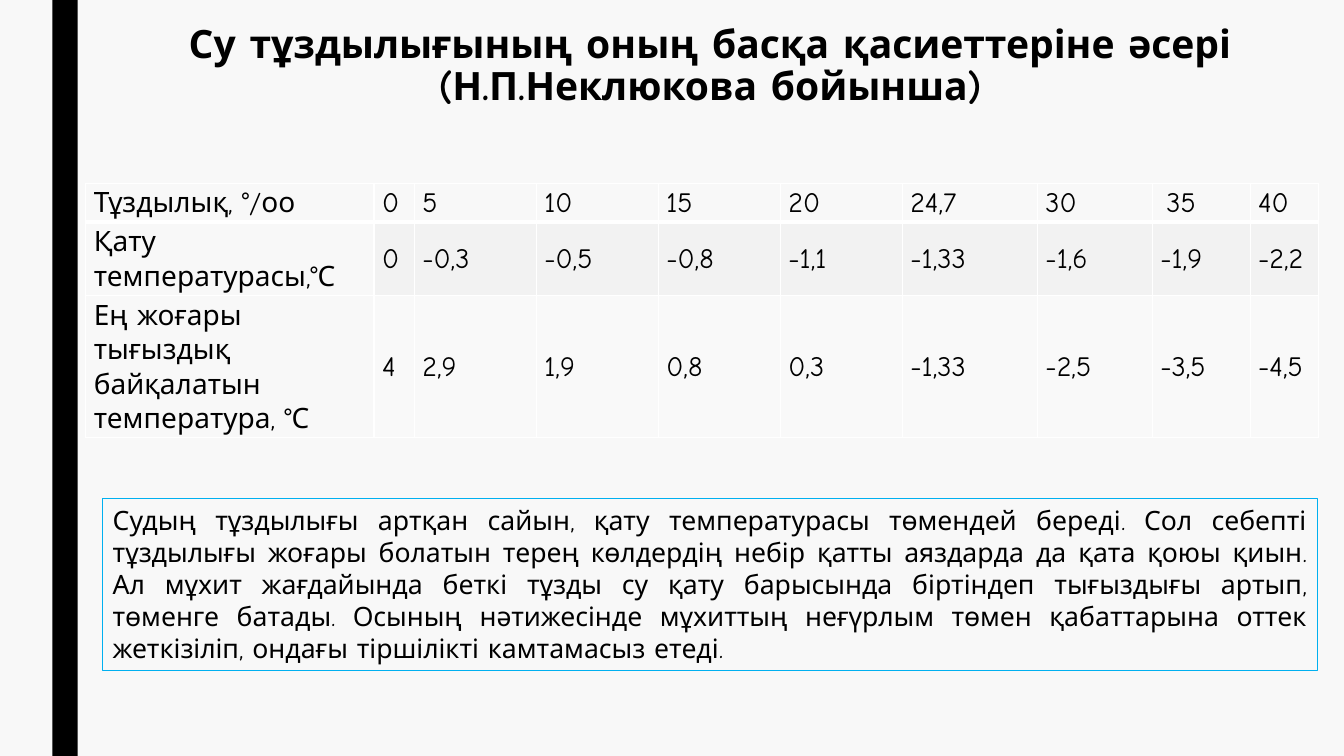
from dataclasses import dataclass

from lxml import etree
from pptx import Presentation
from pptx.dml.color import RGBColor
from pptx.enum.shapes import MSO_SHAPE
from pptx.enum.text import MSO_ANCHOR, MSO_AUTO_SIZE, PP_ALIGN
from pptx.oxml.ns import qn
from pptx.util import Inches, Pt

RECTANGLE = MSO_SHAPE.RECTANGLE
TOP, MIDDLE = MSO_ANCHOR.TOP, MSO_ANCHOR.MIDDLE
LEFT, CENTER, JUSTIFY = PP_ALIGN.LEFT, PP_ALIGN.CENTER, PP_ALIGN.JUSTIFY
NO_FIT, FIT_SHAPE = MSO_AUTO_SIZE.NONE, MSO_AUTO_SIZE.SHAPE_TO_FIT_TEXT

FONT = "Comic Neue"
COLOURS = {
    "page": "F8F8F8",
    "ink": "000000",
    "band": "F2F2F2",
    "plain": "F9F9F9",
    "grid": "FFFFFF",
    "frame": "00B0F0",
}
SLIDE_WIDTH, SLIDE_HEIGHT = Inches(13.33), Inches(7.5)


@dataclass(frozen=True)
class Area:
    """A place on the slide, in percent of its width and height."""
    left: float
    top: float
    width: float
    height: float

    def lengths(self) -> tuple[int, int, int, int]:
        return (across(self.left), down(self.top),
                across(self.width), down(self.height))


@dataclass(frozen=True)
class TextStyle:
    size: float
    align: PP_ALIGN = LEFT
    bold: bool = False
    line_spacing: float = 1.0
    space_after: float = 0


@dataclass(frozen=True)
class TextBlock:
    area: Area
    lines: tuple[str, ...]
    style: TextStyle
    fit: MSO_AUTO_SIZE
    frame: str | None = None


@dataclass(frozen=True)
class TableRow:
    height: float
    label: str
    values: tuple[str, ...]
    fill: str
    rule_below: float = 1


SIDE_BAR = Area(3.9, 0, 1.88, 100)
TABLE_AREA = Area(6.38, 24.27, 91.65, 34.13)
COLUMN_WIDTHS = (21.45, 3, *[9.08] * 4, 10.05, 8.55, 7.28, 5.1)
CELL_STYLE = TextStyle(20, line_spacing=1.07, space_after=8)
INDENTED_VALUE = "35"

TABLE_ROWS = (
    TableRow(4.93, "Тұздылық, °/оо",
             ("0", "5", "10", "15", "20", "24,7", "30", "35", "40"), "page", 3),
    TableRow(9.73, "Қату температурасы,°С",
             ("0", "-0,3", "-0,5", "-0,8", "-1,1", "-1,33", "-1,6", "-1,9", "-2,2"),
             "band"),
    TableRow(9.87, "Ең жоғары тығыздық байқалатын температура, °С",
             ("4", "2,9", "1,9", "0,8", "0,3", "-1,33", "-2,5", "-3,5", "-4,5"),
             "plain"),
)

TEXT_BLOCKS = (
    TextBlock(
        Area(7.65, 2.67, 90.38, 21.6),
        ("Су тұздылығының оның басқа қасиеттеріне әсері", "(Н.П.Неклюкова бойынша)"),
        TextStyle(27.9, CENTER, bold=True, line_spacing=0.89), NO_FIT),
    TextBlock(
        Area(7.65, 66, 90.38, 22.67),
        ("Судың тұздылығы артқан сайын, қату температурасы төмендей береді. "
         "Сол себепті тұздылығы жоғары болатын терең көлдердің небір қатты "
         "аяздарда да қата қоюы қиын. Ал мұхит жағдайында беткі тұзды су қату "
         "барысында біртіндеп тығыздығы артып, төменге батады. Осының "
         "нәтижесінде мұхиттың неғүрлым төмен қабаттарына оттек жеткізіліп, "
         "ондағы тіршілікті камтамасыз етеді.",),
        TextStyle(19, JUSTIFY), FIT_SHAPE, "frame"),
)


def across(percent: float) -> int:
    return round(SLIDE_WIDTH * percent / 100)


def down(percent: float) -> int:
    return round(SLIDE_HEIGHT * percent / 100)


def colour(name: str) -> RGBColor:
    return RGBColor.from_string(COLOURS[name])


def write(para, lines: tuple[str, ...], style: TextStyle) -> None:
    para.alignment = style.align
    para.line_spacing = style.line_spacing
    para.space_after = Pt(style.space_after)
    for number, line in enumerate(lines):
        if number:
            para.add_line_break()
        span = para.add_run()
        span.text = line
        span.font.name = FONT
        span.font.size = Pt(style.size)
        span.font.bold = style.bold
        span.font.color.rgb = colour("ink")


def draw_side_bar(page) -> None:
    bar = page.shapes.add_shape(RECTANGLE, *SIDE_BAR.lengths())
    bar.shadow.inherit = False
    bar.fill.solid()
    bar.fill.fore_color.rgb = colour("ink")
    bar.line.fill.background()


def draw_text(page, block: TextBlock) -> None:
    box = page.shapes.add_textbox(*block.area.lengths())
    box.text_frame.word_wrap = True
    box.text_frame.auto_size = block.fit
    box.text_frame.vertical_anchor = TOP
    if block.frame:
        box.line.color.rgb = colour(block.frame)
        box.line.width = Pt(0.75)
    write(box.text_frame.paragraphs[0], block.lines, block.style)


def draw_borders(cell, rule_below: float) -> None:
    properties = cell._tc.get_or_add_tcPr()
    for side, width in (("L", 1), ("R", 1), ("T", 1), ("B", rule_below)):
        border = etree.SubElement(properties, qn(f"a:ln{side}"), w=str(Pt(width)))
        paint = etree.SubElement(border, qn("a:solidFill"))
        etree.SubElement(paint, qn("a:srgbClr"), val=COLOURS["grid"])


def fill_cell(cell, text: str, fill: str, rule_below: float) -> None:
    draw_borders(cell, rule_below)
    cell.fill.solid()
    cell.fill.fore_color.rgb = colour(fill)
    cell.vertical_anchor = MIDDLE
    cell.margin_left = cell.margin_right = across(0.6)
    cell.margin_top = cell.margin_bottom = down(0.27)
    para = cell.text_frame.paragraphs[0]
    write(para, (text,), CELL_STYLE)
    if text == INDENTED_VALUE:
        para._p.get_or_add_pPr().set("indent", str(across(0.45)))


def draw_table(page) -> None:
    holder = page.shapes.add_table(
        len(TABLE_ROWS), len(COLUMN_WIDTHS), *TABLE_AREA.lengths())
    table = holder.table
    table.first_row = table.horz_banding = False
    for column, width in zip(table.columns, COLUMN_WIDTHS):
        column.width = across(width)
    for row, entry in zip(table.rows, TABLE_ROWS):
        row.height = down(entry.height)
        for number, text in enumerate((entry.label, *entry.values)):
            fill = entry.fill if number else "page"
            fill_cell(row.cells[number], text, fill, entry.rule_below)
    holder.height = down(TABLE_AREA.height)


def main() -> None:
    deck = Presentation()
    deck.slide_width, deck.slide_height = SLIDE_WIDTH, SLIDE_HEIGHT
    page = deck.slides.add_slide(deck.slide_layouts[6])
    page.background.fill.solid()
    page.background.fill.fore_color.rgb = colour("page")

    # Side bar, heading, salinity table and explanation
    heading, explanation = TEXT_BLOCKS
    draw_side_bar(page)
    draw_text(page, heading)
    draw_table(page)
    draw_text(page, explanation)
    deck.save("out.pptx")


if __name__ == "__main__":
    main()
